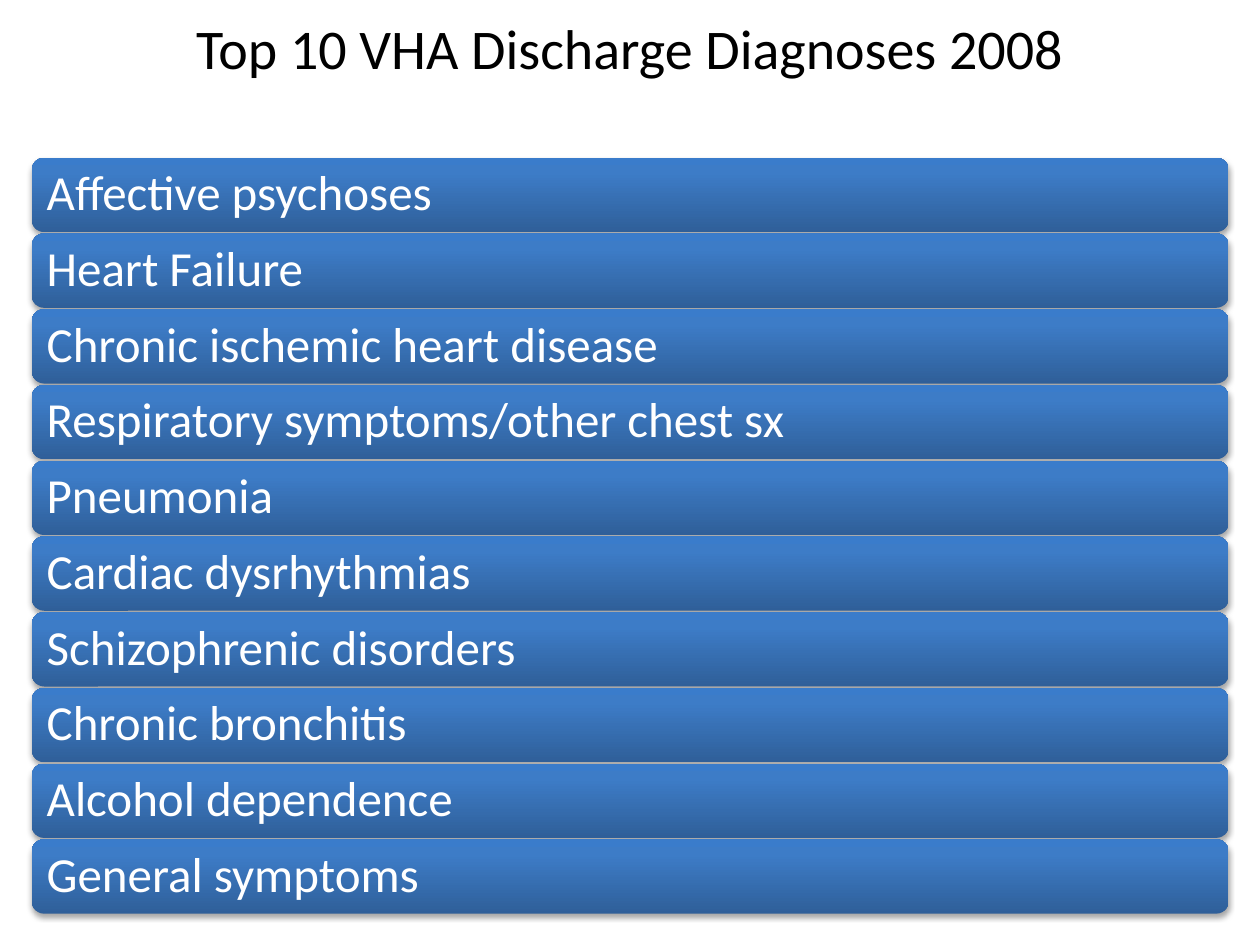
from copy import deepcopy

from lxml.etree import SubElement
from pptx import Presentation
from pptx.dml.color import RGBColor
from pptx.enum.shapes import MSO_SHAPE
from pptx.enum.text import MSO_ANCHOR, PP_ALIGN
from pptx.oxml.ns import qn
from pptx.util import Cm, Pt

COLORS = {
    "title": "000000",
    "label": "FFFFFF",
    "shadow": "000000",
    "bar_bottom": "2F5F99",
    "bar_middle": "3D7CC7",
    "bar_top": "3A7CCB",
}
DIAGNOSES = [
    "Affective psychoses",
    "Heart Failure",
    "Chronic ischemic heart disease",
    "Respiratory symptoms/other chest sx",
    "Pneumonia",
    "Cardiac dysrhythmias",
    "Schizophrenic disorders",
    "Chronic bronchitis",
    "Alcohol dependence",
    "General symptoms",
]


def write_text(shape, text, *, size, color, align, spacing=1.0):
    frame = shape.text_frame
    frame.word_wrap = True
    frame.vertical_anchor = MSO_ANCHOR.MIDDLE
    para = frame.paragraphs[0]
    para.alignment = align
    para.line_spacing = spacing
    span = para.add_run()
    span.text = text
    span.font.name = "Calibri"
    span.font.size = Pt(size)
    span.font.color.rgb = RGBColor.from_string(COLORS[color])


def fill_gradient(shape):
    shape.fill.gradient()
    shape.fill.gradient_angle = 90
    stop_list = shape._element.spPr.find(".//" + qn("a:gsLst"))
    stop_list.append(deepcopy(stop_list[0]))
    stops = [(0, "bar_bottom"), (0.8, "bar_middle"), (1, "bar_top")]
    for stop, (position, color) in zip(shape.fill.gradient_stops, stops):
        stop.position = position
        stop.color.rgb = RGBColor.from_string(COLORS[color])


def add_shadow(shape):
    shape.shadow.inherit = False
    effects = shape._element.spPr.find(qn("a:effectLst"))
    shadow = SubElement(effects, qn("a:outerShdw"), blurRad=str(Pt(3.1)),
                        dist=str(Pt(1.8)), dir="5400000", rotWithShape="0")
    color = SubElement(shadow, qn("a:srgbClr"), val=COLORS["shadow"])
    SubElement(color, qn("a:alpha"), val="35000")


def place_title(page, text, left, top, width, height):
    title = page.shapes.title
    title.left, title.top, title.width, title.height = left, top, width, height
    write_text(title, text, size=32, color="title", align=PP_ALIGN.CENTER)


def add_bar_list(page, labels, left, top, width, height):
    bar_height = Cm(1.5)
    pitch = (height - bar_height) / (len(labels) - 1)
    for index, label in enumerate(labels):
        bar = page.shapes.add_shape(MSO_SHAPE.ROUNDED_RECTANGLE, left,
                                    round(top + index * pitch), width, bar_height)
        fill_gradient(bar)
        bar.line.fill.background()
        add_shadow(bar)
        frame = bar.text_frame
        frame.margin_left = frame.margin_right = Cm(0.23)
        frame.margin_top = frame.margin_bottom = 0
        write_text(bar, label, size=28, color="label", align=PP_ALIGN.LEFT, spacing=0.9)


def main():
    deck = Presentation()
    deck.slide_width, deck.slide_height = Cm(25.4), Cm(19.05)
    page = deck.slides.add_slide(deck.slide_layouts[5])
    add_bar_list(page, DIAGNOSES, Cm(0.64), Cm(3.18), Cm(24.13), Cm(15.24))
    place_title(page, "Top 10 VHA Discharge Diagnoses 2008",
                Cm(0), Cm(-0.64), Cm(25.4), Cm(3.18))
    deck.save("out.pptx")


if __name__ == "__main__":
    main()
